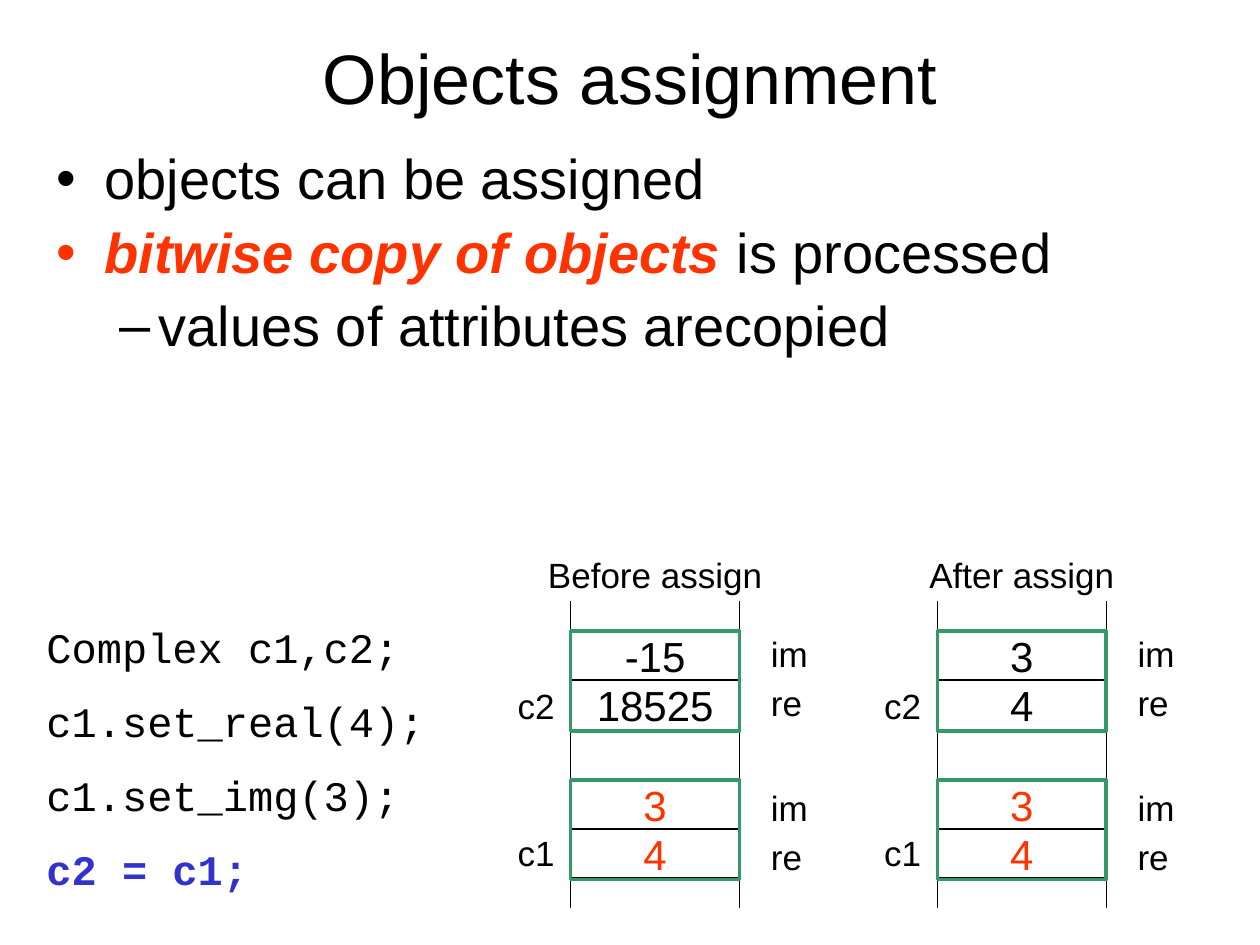
from lxml import etree
from pptx import Presentation
from pptx.dml.color import RGBColor
from pptx.enum.shapes import MSO_CONNECTOR, MSO_SHAPE
from pptx.enum.text import MSO_ANCHOR, PP_ALIGN
from pptx.oxml.ns import qn
from pptx.util import Inches, Pt

STRAIGHT = MSO_CONNECTOR.STRAIGHT
RECTANGLE = MSO_SHAPE.RECTANGLE
MIDDLE, TOP = MSO_ANCHOR.MIDDLE, MSO_ANCHOR.TOP
CENTER, LEFT = PP_ALIGN.CENTER, PP_ALIGN.LEFT

BLACK = RGBColor(0x00, 0x00, 0x00)
RED = RGBColor(0xFF, 0x33, 0x00)
GREEN = RGBColor(0x33, 0x99, 0x66)
BLUE = RGBColor(0x33, 0x33, 0xCC)

CELL_WIDTH, CELL_HEIGHT = 1.34, 0.39
LABEL_WIDTH, LABEL_HEIGHT = 0.71, 0.43


def add_run(paragraph, text, size, color=BLACK, font="Arial", bold=False, italic=False):
    run = paragraph.add_run()
    run.text = text
    run.font.name = font
    run.font.size = Pt(size)
    run.font.color.rgb = color
    run.font.bold = bold
    run.font.italic = italic


def add_text_box(slide, left, top, width, height, anchor=TOP):
    box = slide.shapes.add_textbox(Inches(left), Inches(top), Inches(width), Inches(height))
    frame = box.text_frame
    frame.word_wrap = True
    frame.vertical_anchor = anchor
    return frame


def add_label(slide, text, left, top, width=LABEL_WIDTH, align=LEFT):
    paragraph = add_text_box(slide, left, top, width, LABEL_HEIGHT).paragraphs[0]
    paragraph.alignment = align
    add_run(paragraph, text, 20)


def add_rectangle(slide, left, top, height, color, line_width):
    shape = slide.shapes.add_shape(
        RECTANGLE, Inches(left), Inches(top), Inches(CELL_WIDTH), Inches(height))
    shape.shadow.inherit = False
    shape.fill.background()
    shape.line.color.rgb = color
    shape.line.width = Pt(line_width)
    return shape


def add_rail(slide, x, top, bottom):
    rail = slide.shapes.add_connector(
        STRAIGHT, Inches(x), Inches(top), Inches(x), Inches(bottom))
    rail.line.color.rgb = BLACK
    rail.line.width = Pt(0.75)
    etree.SubElement(rail.element.spPr, qn("a:effectLst"))


def set_bullet(paragraph, character, margin, indent):
    properties = paragraph._p.get_or_add_pPr()
    properties.set("marL", str(Inches(margin)))
    properties.set("indent", str(Inches(indent)))
    etree.SubElement(properties, qn("a:buFont")).set("typeface", "Arial")
    etree.SubElement(properties, qn("a:buChar")).set("char", character)


def next_paragraph(frame, index, space_before):
    if index == 0:
        return frame.paragraphs[0]
    paragraph = frame.add_paragraph()
    paragraph.space_before = Pt(space_before)
    return paragraph


def add_title(slide, left, top, width, height):
    paragraph = add_text_box(slide, left, top, width, height, MIDDLE).paragraphs[0]
    paragraph.alignment = CENTER
    add_run(paragraph, "Objects assignment", 40)


def add_bullets(slide, left, top, width, height):
    frame = add_text_box(slide, left, top, width, height)
    bullets = [
        (0, [("objects can be assigned", False)]),
        (0, [("bitwise copy of objects ", True), ("is processed", False)]),
        (1, [("values of attributes arecopied", False)]),
    ]
    styles = [("•", 0.38, -0.38), ("–", 0.81, -0.31)]
    for index, (level, runs) in enumerate(bullets):
        paragraph = next_paragraph(frame, index, 7.5)
        paragraph.level = level
        paragraph.line_spacing = 0.9
        set_bullet(paragraph, *styles[level])
        for text, strong in runs:
            add_run(paragraph, text, 32, RED if strong else BLACK, bold=strong, italic=strong)


def add_code(slide, left, top, width, height):
    frame = add_text_box(slide, left, top, width, height)
    lines = ["Complex c1,c2;", "c1.set_real(4);", "c1.set_img(3);", "c2 = c1;"]
    for index, line in enumerate(lines):
        last = index == len(lines) - 1
        add_run(next_paragraph(frame, index, 13.6), line, 24,
                BLUE if last else BLACK, "Courier New", bold=last)


def add_object(slide, left, top, name, name_offset, values, color):
    # Two attribute cells with their names on the right
    for row, (attribute, value) in enumerate(zip(("im", "re"), values)):
        cell_top = top + row * CELL_HEIGHT
        cell = add_rectangle(slide, left, cell_top, CELL_HEIGHT, BLACK, 1)
        frame = cell.text_frame
        frame.word_wrap = False
        frame.vertical_anchor = MIDDLE
        frame.paragraphs[0].alignment = CENTER
        add_run(frame.paragraphs[0], value, 24, color)
        add_label(slide, attribute, left + 1.49, cell_top + name_offset[1])
    # Object name and green outline
    add_label(slide, name, left - 0.63, top + name_offset[0], align=CENTER)
    add_rectangle(slide, left, top, 2 * CELL_HEIGHT + 0.01, GREEN, 2)


def add_memory(slide, left, top, caption, c2_values):
    add_label(slide, caption, left - 0.47, top, 2.28, CENTER)
    for x in (left, left + CELL_WIDTH):
        add_rail(slide, x, top + 0.43, top + 2.87)
    add_object(slide, left, top + 0.67, "c2", (0.37, -0.04), c2_values, BLACK)
    add_object(slide, left, top + 1.85, "c1", (0.36, 0), ("3", "4"), RED)


def main():
    presentation = Presentation()
    presentation.slide_width = Inches(10)
    presentation.slide_height = Inches(7.5)
    slide = presentation.slides.add_slide(presentation.slide_layouts[6])
    add_title(slide, 0.75, 0.13, 8.5, 0.95)
    add_bullets(slide, 0.35, 1.15, 9.29, 2.28)
    add_code(slide, 0.27, 4.88, 3.31, 2.18)
    add_memory(slide, 4.53, 4.34, "Before assign", ("-15", "18525"))
    add_memory(slide, 7.44, 4.34, "After assign", ("3", "4"))
    presentation.save("out.pptx")


if __name__ == "__main__":
    main()
